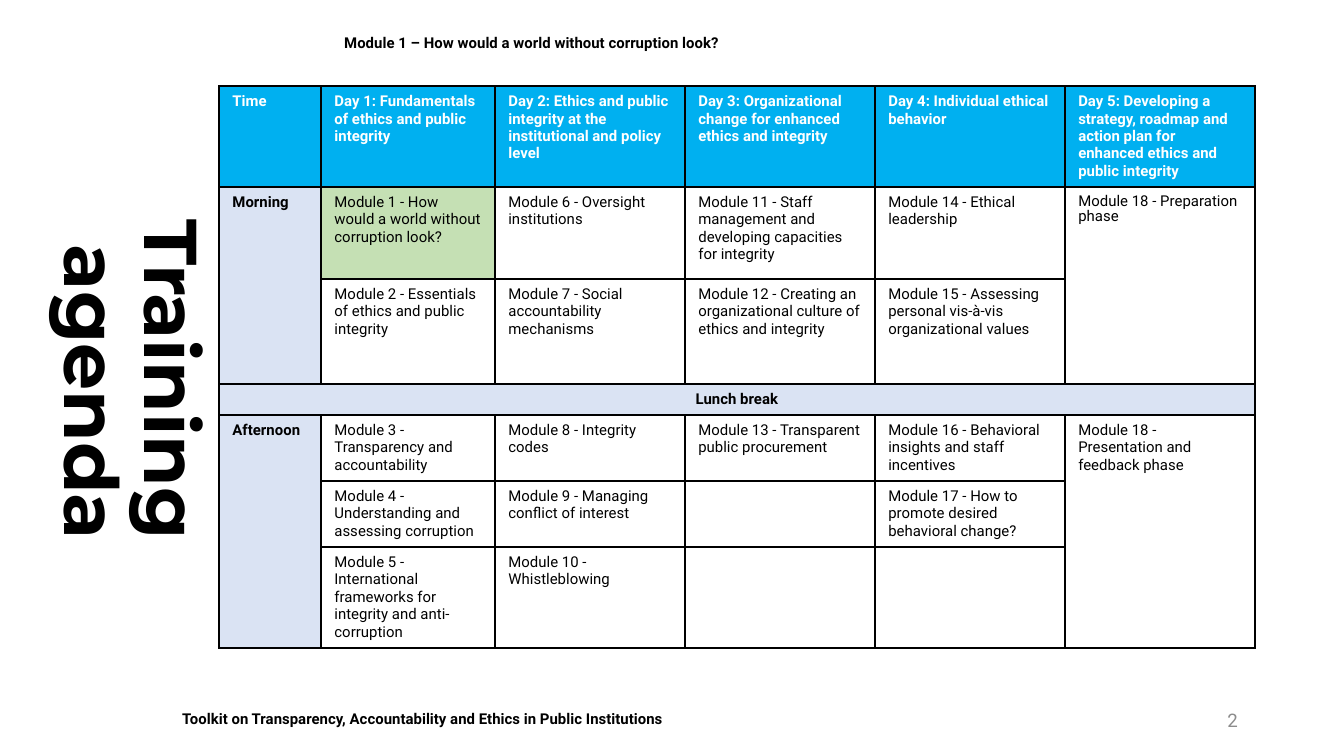
from lxml.etree import SubElement
from pptx import Presentation
from pptx.dml.color import RGBColor
from pptx.enum.shapes import MSO_SHAPE
from pptx.enum.text import MSO_ANCHOR, PP_ALIGN
from pptx.oxml.ns import qn
from pptx.util import Pt

PX = 914400 / 134.4
COLORS = {"black": "000000", "white": "FFFFFF", "header": "00B0F0",
          "band": "DAE3F3", "current": "C5E0B4", "number": "8C8C8C"}

COLUMNS = [102, 174, 190, 190, 190, 190]
ROWS = [101, 92, 105, 31, 66, 66, 101]
AGENDA = [
    ["Time", "Day 1: Fundamentals of ethics and public integrity",
     "Day 2: Ethics and public integrity at the institutional and policy level",
     "Day 3: Organizational change for enhanced ethics and integrity",
     "Day 4: Individual ethical behavior",
     "Day 5: Developing a strategy, roadmap and action plan for enhanced ethics and public integrity"],
    ["Morning", "Module 1 - How would a world without corruption look?",
     "Module 6 - Oversight institutions",
     "Module 11 - Staff management and developing capacities for integrity",
     "Module 14 - Ethical leadership", "Module 18 - Preparation phase"],
    ["", "Module 2 - Essentials of ethics and public integrity",
     "Module 7 - Social accountability mechanisms",
     "Module 12 - Creating an organizational culture of ethics and integrity",
     "Module 15 - Assessing personal vis-à-vis organizational values", ""],
    ["Lunch break", "", "", "", "", ""],
    ["Afternoon", "Module 3 - Transparency and accountability",
     "Module 8 - Integrity codes", "Module 13 - Transparent public procurement",
     "Module 16 - Behavioral insights and staff incentives",
     "Module 18 - Presentation and feedback phase"],
    ["", "Module 4 - Understanding and assessing corruption",
     "Module 9 - Managing conflict of interest", "",
     "Module 17 - How to promote desired behavioral change?", ""],
    ["", "Module 5 - International frameworks for integrity and anti-corruption",
     "Module 10 - Whistleblowing", "", "", ""],
]
LUNCH = 3
MERGES = [((1, 0), (2, 0)), ((1, 5), (2, 5)), ((LUNCH, 0), (LUNCH, 5)),
          ((4, 0), (6, 0)), ((4, 5), (6, 5))]


def emu(px):
    return round(px * PX)


def rgb(name):
    return RGBColor.from_string(COLORS[name])


class SlideBuilder:
    def __init__(self, slide, font="Roboto", size=8):
        self.slide = slide
        self.font = font
        self.size = size

    def set_text(self, tf, text, color="black", bold=True, size=None, font=None,
                 align=PP_ALIGN.LEFT, spacing=None):
        tf.text = text
        p = tf.paragraphs[0]
        p.alignment = align
        if spacing:
            p.line_spacing = spacing
        for style in [p.font] + [r.font for r in p.runs]:
            style.name = font or self.font
            style.size = Pt(size or self.size)
            style.bold = bold
            style.color.rgb = rgb(color)

    def text(self, box, text, anchor=MSO_ANCHOR.MIDDLE, **style):
        sp = self.slide.shapes.add_textbox(*map(emu, box))
        tf = sp.text_frame
        tf.word_wrap = True
        tf.vertical_anchor = anchor
        self.set_text(tf, text, **style)
        return sp

    def bar(self, box, text):
        sp = self.slide.shapes.add_shape(MSO_SHAPE.RECTANGLE, *map(emu, box))
        sp.shadow.inherit = False
        sp.fill.solid()
        sp.fill.fore_color.rgb = rgb("white")
        sp.line.fill.background()
        sp.text_frame.word_wrap = True
        sp.text_frame.vertical_anchor = MSO_ANCHOR.TOP
        self.set_text(sp.text_frame, text)

    def vertical_title(self, box, text, end_inset):
        """Text turned clockwise, ending end_inset px above the box bottom."""
        sp = self.text(box, text, size=40, font="Montserrat",
                       align=PP_ALIGN.RIGHT, spacing=0.9)
        sp.text_frame.margin_bottom = emu(end_inset)
        sp.text_frame._txBody.bodyPr.set("vert", "vert")

    def borders(self, cell):
        tc_pr = cell._tc.get_or_add_tcPr()
        for i, side in enumerate(("a:lnL", "a:lnR", "a:lnT", "a:lnB")):
            ln = tc_pr.makeelement(qn(side), {"w": str(Pt(1))})
            fill = SubElement(ln, qn("a:solidFill"))
            SubElement(fill, qn("a:srgbClr"), val=COLORS["black"])
            tc_pr.insert(i, ln)

    def agenda(self, left, top):
        frame = self.slide.shapes.add_table(
            len(ROWS), len(COLUMNS), emu(left), emu(top),
            emu(sum(COLUMNS)), emu(sum(ROWS)))
        table = frame.table
        table.first_row = table.horz_banding = False
        for column, width in zip(table.columns, COLUMNS):
            column.width = emu(width)
        for row, height in zip(table.rows, ROWS):
            row.height = emu(height)
        for i, texts in enumerate(AGENDA):
            for j, text in enumerate(texts):
                cell = table.cell(i, j)
                if i == 0:
                    fill = "header"
                elif j == 0 or i == LUNCH:
                    fill = "band"
                else:
                    fill = "current" if (i, j) == (1, 1) else "white"
                cell.fill.solid()
                cell.fill.fore_color.rgb = rgb(fill)
                self.borders(cell)
                self.set_text(cell.text_frame, text,
                              color="white" if i == 0 else "black",
                              bold=i == 0 or j == 0,
                              align=PP_ALIGN.CENTER if i == LUNCH else PP_ALIGN.LEFT,
                              spacing=0.9 if (i, j) == (1, 5) else None)
        for start, end in MERGES:
            table.cell(*start).merge(table.cell(*end))


def main():
    prs = Presentation()
    prs.slide_width, prs.slide_height = emu(1344), emu(756)
    s = SlideBuilder(prs.slides.add_slide(prs.slide_layouts[6]))
    s.bar((169, 703, 964, 32),
          "Toolkit on Transparency, Accountability and Ethics in Public Institutions")
    s.vertical_title((38, 86, 181, 595), "Training agenda", end_inset=141)
    s.agenda(219, 86)
    s.text((331, 13, 921, 59), "Module 1 – How would a world without corruption look?")
    s.text((949, 700, 302, 40), "2", color="number", bold=False, size=10,
           align=PP_ALIGN.RIGHT)
    prs.save("out.pptx")


if __name__ == "__main__":
    main()
